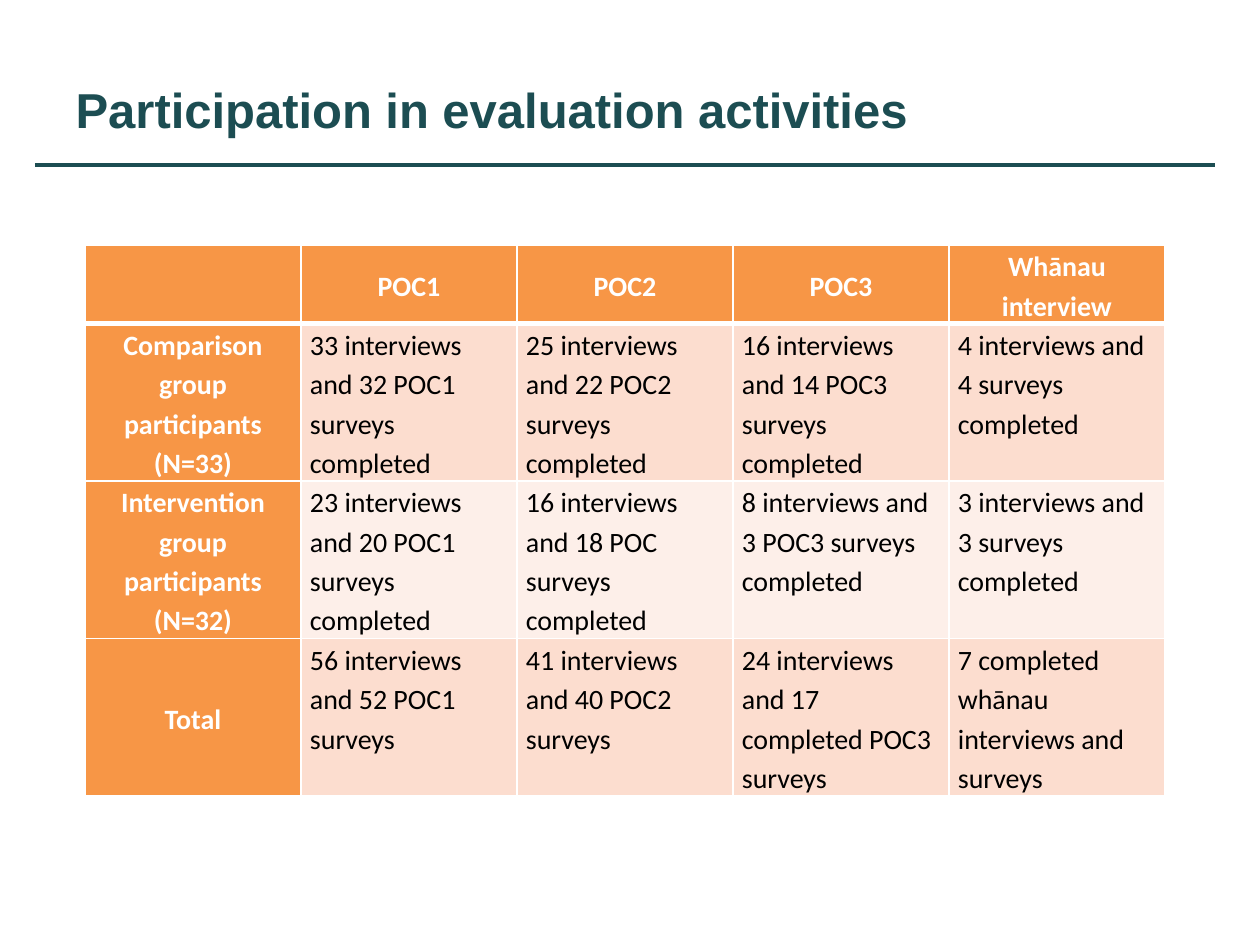
from lxml.etree import SubElement
from pptx import Presentation
from pptx.dml.color import RGBColor
from pptx.enum.shapes import MSO_CONNECTOR as Connector
from pptx.enum.text import MSO_ANCHOR as Anchor, PP_ALIGN as Align
from pptx.oxml.ns import qn
from pptx.util import Pt

PX = 914400 / 126  # EMU in one pixel

TEAL = RGBColor(0x1C, 0x4D, 0x52)
ORANGE = RGBColor(0xF7, 0x96, 0x46)
PEACH = RGBColor(0xFC, 0xDD, 0xCF)
PALE_PEACH = RGBColor(0xFD, 0xEF, 0xE9)
WHITE = RGBColor(0xFF, 0xFF, 0xFF)
BLACK = RGBColor(0x00, 0x00, 0x00)

COLUMN_WIDTH = 216
HEADER_HEIGHT, BODY_HEIGHT = 74, 151
ROWS = [
    ["", "POC1", "POC2", "POC3", "Whānau interview"],
    ["Comparison group participants (N=33)",
     "33 interviews and 32 POC1 surveys completed",
     "25 interviews and 22 POC2 surveys completed",
     "16 interviews and 14 POC3 surveys completed",
     "4 interviews and 4 surveys completed"],
    ["Intervention group participants (N=32)",
     "23 interviews and 20 POC1 surveys completed",
     "16 interviews and 18 POC surveys completed",
     "8 interviews and 3 POC3 surveys completed",
     "3 interviews and 3 surveys completed"],
    ["Total",
     "56 interviews and 52 POC1 surveys",
     "41 interviews and 40 POC2 surveys",
     "24 interviews and 17 completed POC3 surveys",
     "7 completed whānau interviews and surveys"],
]


def px(*lengths):
    return [round(length * PX) for length in lengths]


def write_text(frame, text, *, font, size, color, bold=False, align=Align.LEFT,
               line_spacing=None, gap=None):
    para = frame.paragraphs[0]
    para.alignment = align
    if line_spacing is not None:
        para.line_spacing = line_spacing
    if gap is not None:
        para.space_before = para.space_after = Pt(gap)
    span = para.add_run()
    span.text = text
    span.font.name = font
    span.font.size = Pt(size)
    span.font.bold = bold
    span.font.color.rgb = color


def add_title(page, text):
    title = page.shapes.title
    title.left, title.top, title.width, title.height = px(63, 38, 1134, 107)
    title.text_frame.vertical_anchor = Anchor.BOTTOM
    write_text(title.text_frame, text, font="Arial", size=28, color=TEAL, bold=True)


def add_rule(page, left, right, y):
    rule = page.shapes.add_connector(Connector.STRAIGHT, *px(left, y, right, y))
    rule.line.color.rgb = TEAL
    rule.line.width = Pt(2.25)
    SubElement(rule._element.spPr, qn("a:effectLst"))


def set_borders(cell, **widths):
    """Draw white borders; the border elements must precede the cell fill."""
    properties = cell._tc.get_or_add_tcPr()
    for index, (side, width) in enumerate(widths.items()):
        border = SubElement(properties, qn(f"a:ln{side}"), w=str(Pt(width)))
        fill = SubElement(border, qn("a:solidFill"))
        SubElement(fill, qn("a:srgbClr"), val=str(WHITE))
        properties.insert(index, border)


def format_cell(cell, text, row, column):
    is_heading = row == 0 or column == 0
    cell.margin_left, cell.margin_right = px(9, 9)
    cell.margin_top = cell.margin_bottom = 0
    cell.vertical_anchor = Anchor.MIDDLE if is_heading else Anchor.TOP
    if text:
        write_text(cell.text_frame, text, font="Calibri", size=16,
                   color=WHITE if is_heading else BLACK, bold=is_heading,
                   align=Align.CENTER if is_heading else Align.LEFT,
                   line_spacing=1.15, gap=3)
    cell.fill.solid()
    band = PEACH if row % 2 else PALE_PEACH
    if row == len(ROWS) - 1:
        band = PEACH
    cell.fill.fore_color.rgb = ORANGE if is_heading else band
    set_borders(cell, L=1, R=1, T=3 if row == 1 else 1, B=3 if row == 0 else 1)


def add_participation_table(page, left, top):
    column_count = len(ROWS[0])
    width = COLUMN_WIDTH * column_count
    height = HEADER_HEIGHT + BODY_HEIGHT * (len(ROWS) - 1)
    table = page.shapes.add_table(len(ROWS), column_count,
                                  *px(left, top, width, height)).table
    for column in table.columns:
        column.width, = px(COLUMN_WIDTH)
    for r, texts in enumerate(ROWS):
        table.rows[r].height, = px(BODY_HEIGHT if r else HEADER_HEIGHT)
        for c, text in enumerate(texts):
            format_cell(table.cell(r, c), text, r, c)


def main():
    deck = Presentation()
    deck.slide_width, deck.slide_height = px(1260, 945)
    page = deck.slides.add_slide(deck.slide_layouts[5])  # Title Only

    # Heading
    add_rule(page, left=35, right=1215, y=165)
    add_title(page, "Participation in evaluation activities")

    # Participation by group and evaluation point
    add_participation_table(page, left=85, top=245)

    deck.save("out.pptx")


if __name__ == "__main__":
    main()
